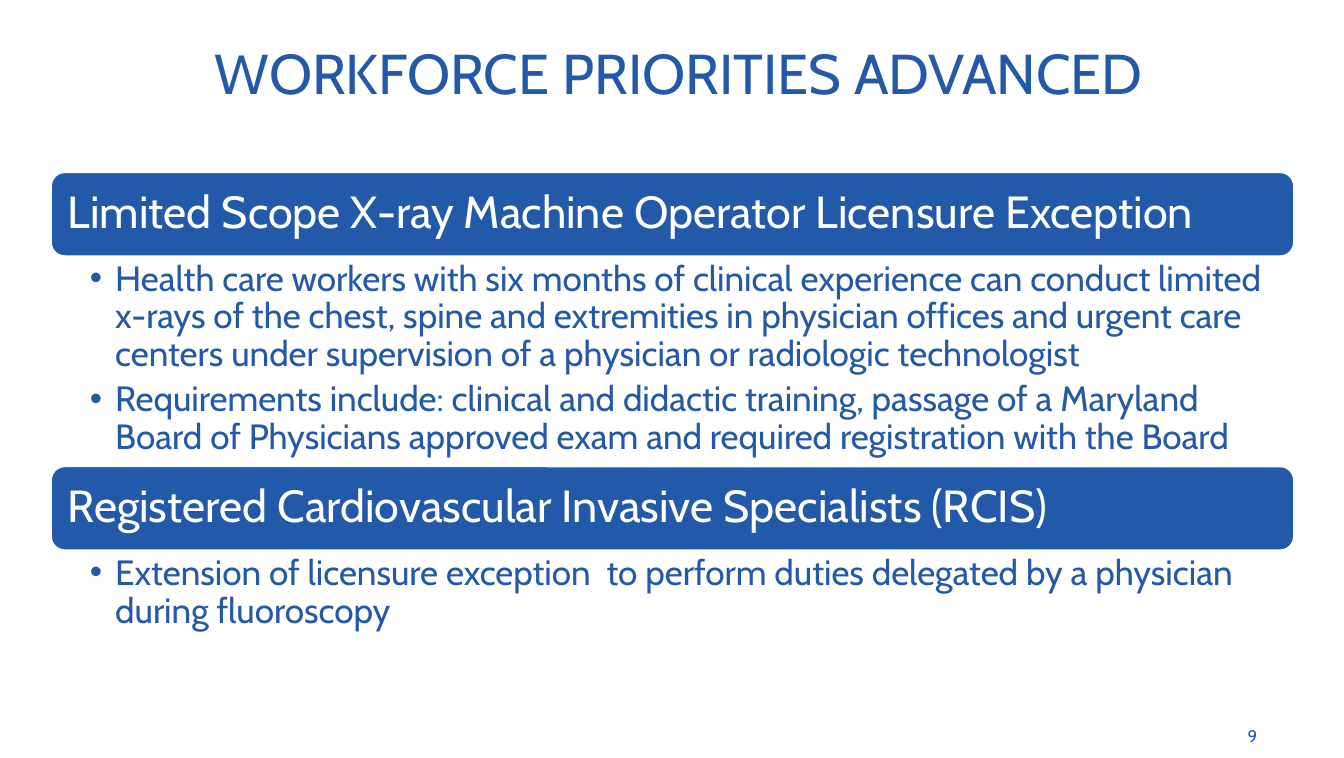
"""Build the workforce priorities slide."""
from lxml import etree
from pptx import Presentation
from pptx.dml.color import RGBColor
from pptx.enum.shapes import MSO_SHAPE
from pptx.enum.text import MSO_ANCHOR, MSO_AUTO_SIZE, PP_ALIGN
from pptx.oxml.ns import qn
from pptx.util import Emu, Pt

ROUNDED = MSO_SHAPE.ROUNDED_RECTANGLE
TOP, MIDDLE = MSO_ANCHOR.TOP, MSO_ANCHOR.MIDDLE
LEFT, CENTER, RIGHT = PP_ALIGN.LEFT, PP_ALIGN.CENTER, PP_ALIGN.RIGHT
NO_FIT = MSO_AUTO_SIZE.NONE

EMU_PER_PX = 9144
TWO_CONTENT = 3
FONT = "Cabin"
BLUE, WHITE = "2359A9", "FFFFFF"
BAND_X, BAND_W, BAND_H = 50, 1231, 84
INDENT = 25

SECTIONS = [
    (170, 206, "Limited Scope X-ray Machine Operator Licensure Exception", [
        "Health care workers with six months of clinical experience can conduct "
        "limited x-rays of the chest, spine and extremities in physician offices "
        "and urgent care centers under supervision of a physician or radiologic "
        "technologist",
        "Requirements include: clinical and didactic training, passage of a "
        "Maryland Board of Physicians approved exam and required registration "
        "with the Board",
    ]),
    (461, 85, "Registered Cardiovascular Invasive Specialists (RCIS)", [
        "Extension of licensure exception  to perform duties delegated by a "
        "physician during fluoroscopy",
    ]),
]


def px(n):
    return Emu(n * EMU_PER_PX)


def color(value):
    return RGBColor.from_string(value)


def place(sp, x, y, w, h):
    sp.left, sp.top, sp.width, sp.height = px(x), px(y), px(w), px(h)


def set_frame(tf, anchor, left=10, top=5, right=10, bottom=5):
    tf.word_wrap = True
    tf.auto_size = NO_FIT
    tf.vertical_anchor = anchor
    tf.margin_left, tf.margin_right = px(left), px(right)
    tf.margin_top, tf.margin_bottom = px(top), px(bottom)


def write(p, text, size, fill, align):
    p.alignment = align
    r = p.add_run()
    r.text = text
    r.font.name = FONT
    r.font.size = Pt(size)
    r.font.color.rgb = color(fill)


def add_bullet(p):
    pPr = p._p.get_or_add_pPr()
    pPr.set("marL", str(px(INDENT)))
    pPr.set("indent", str(-px(INDENT)))
    etree.SubElement(pPr, qn("a:buChar")).set("char", "•")


def fill_title(sp, text):
    place(sp, 67, 9, 1197, 125)
    set_frame(sp.text_frame, MIDDLE)
    write(sp.text_frame.paragraphs[0], text, 40, BLUE, CENTER)


def add_band(slide, y, text):
    sp = slide.shapes.add_shape(ROUNDED, px(BAND_X), px(y), px(BAND_W), px(BAND_H))
    sp.shadow.inherit = False
    sp.fill.solid()
    sp.fill.fore_color.rgb = color(BLUE)
    sp.line.color.rgb = color(WHITE)
    sp.line.width = Pt(2)
    set_frame(sp.text_frame, MIDDLE, 13, 13, 13, 13)
    p = sp.text_frame.paragraphs[0]
    p.line_spacing = 0.9
    write(p, text, 32, WHITE, LEFT)


def fill_list(sp, y, h, items):
    place(sp, BAND_X, y, BAND_W, h)
    tf = sp.text_frame
    set_frame(tf, TOP, 39, 4, 25, 4)
    for i, item in enumerate(items):
        p = tf.add_paragraph() if i else tf.paragraphs[0]
        add_bullet(p)
        p.line_spacing = 0.9
        p.space_before = Pt(0)
        p.space_after = Pt(5)
        write(p, item, 25, BLUE, LEFT)


def add_page_number(slide, text):
    sp = slide.shapes.add_textbox(px(1188), px(708), px(66), px(40))
    set_frame(sp.text_frame, MIDDLE)
    write(sp.text_frame.paragraphs[0], text, 12, BLUE, RIGHT)


def main():
    prs = Presentation()
    prs.slide_width, prs.slide_height = px(1330), px(750)
    slide = prs.slides.add_slide(prs.slide_layouts[TWO_CONTENT])
    title, *bodies = slide.placeholders
    fill_title(title, " WORKFORCE PRIORITIES ADVANCED")
    for body, (y, list_h, heading, items) in zip(bodies, SECTIONS):
        add_band(slide, y, heading)
        fill_list(body, y + BAND_H, list_h, items)
    add_page_number(slide, "9")
    prs.save("out.pptx")


if __name__ == "__main__":
    main()
